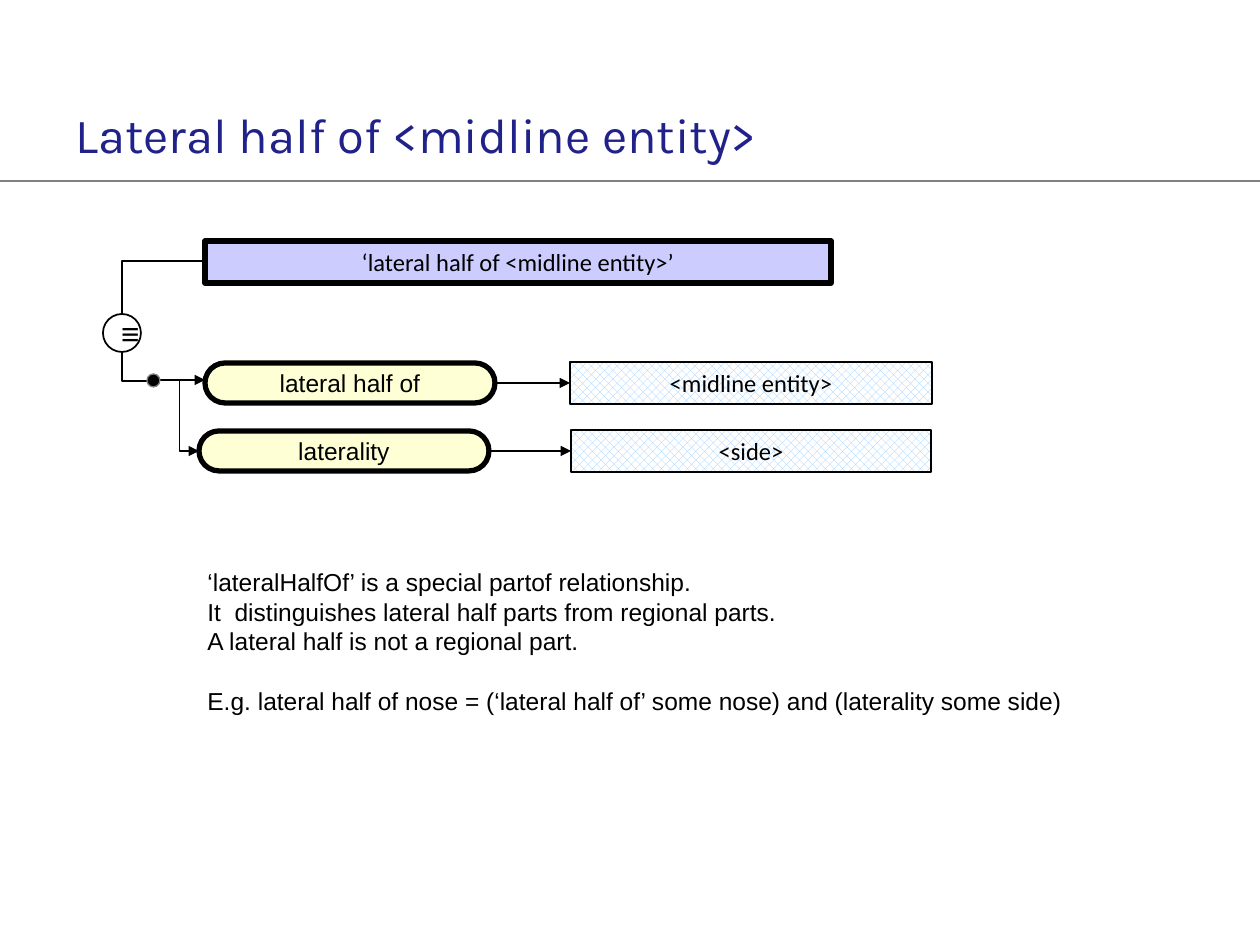
import pptx
import pptx.util
import pptx.dml.color
import pptx.enum.dml
import pptx.enum.shapes
import pptx.enum.text
import pptx.oxml.ns
from lxml import etree

RGB = pptx.dml.color.RGBColor
KIND = pptx.enum.shapes.MSO_SHAPE
LINK = pptx.enum.shapes.MSO_CONNECTOR
ALIGN = pptx.enum.text.PP_ALIGN
MID = pptx.enum.text.MSO_ANCHOR.MIDDLE
Pt = pptx.util.Pt
qn = pptx.oxml.ns.qn

BLACK = RGB(0, 0, 0)
WHITE = RGB(255, 255, 255)
GREY = RGB(128, 128, 128)
NAVY = RGB(0x21, 0x21, 0x8A)
LILAC = RGB(0xCC, 0xCC, 0xFF)
CREAM = RGB(0xFF, 0xFF, 0xD5)
SKY = RGB(0x99, 0xCC, 0xFF)

# Content
TITLE = "Lateral half of <midline entity>"
HEAD = "‘lateral half of <midline entity>’"
# relation, its box, value, its box
ROWS = [
    ("lateral half of", (205, 363, 290, 40), "<midline entity>", (570, 362, 362, 42)),
    ("laterality", (199, 431, 290, 40), "<side>", (571, 430, 360, 42)),
]
NOTES = [
    "‘lateralHalfOf’ is a special partof relationship.",
    "It  distinguishes lateral half parts from regional parts.",
    "A lateral half is not a regional part.",
    "E.g. lateral half of nose = (‘lateral half of’ some nose) and (laterality some side)",
]
LEAD = 16.9  # line pitch of the notes, in points


def px(n):
    return pptx.util.Emu(round(n * 914400 / 126))


def put(para, text, size, font, color=BLACK):
    run = para.add_run()
    run.text = text
    run.font.size = Pt(size)
    run.font.name = font
    run.font.color.rgb = color


def shape(kind, box, fill, width, edge=BLACK):
    item = slide.shapes.add_shape(kind, *map(px, box))
    item.shadow.inherit = False
    item.fill.solid()
    item.fill.fore_color.rgb = fill
    item.line.color.rgb = edge
    item.line.width = Pt(width)
    return item


def label(item, text, font, size=14, tight=False):
    frame = item.text_frame
    frame.word_wrap = True
    frame.vertical_anchor = MID
    if tight:
        frame.margin_left = frame.margin_right = px(9)
        frame.margin_top = frame.margin_bottom = px(4)
    para = frame.paragraphs[0]
    para.alignment = ALIGN.CENTER
    put(para, text, size, font)


def link(start, end, arrow=False, bend=None, width=1, color=BLACK):
    kind = LINK.STRAIGHT if bend is None else LINK.ELBOW
    line = slide.shapes.add_connector(kind, *map(px, start + end))
    line.line.color.rgb = color
    line.line.width = Pt(width)
    props = line._element.spPr
    if bend is not None:
        guides = props.find(qn("a:prstGeom")).get_or_add_avLst()
        etree.SubElement(guides, qn("a:gd"), name="adj1", fmla=f"val {bend * 1000}")
    if arrow:
        etree.SubElement(props.find(qn("a:ln")), qn("a:tailEnd"), type="triangle")
    etree.SubElement(props, qn("a:effectLst"))
    return line


deck = pptx.Presentation()
deck.slide_width, deck.slide_height = px(1260), px(945)
slide = deck.slides.add_slide(deck.slide_layouts[5])

# Title and rule
title = slide.shapes.title
title.left, title.top, title.width, title.height = map(px, (63, 98, 908, 71))
frame = title.text_frame
frame.word_wrap = True
frame.vertical_anchor = MID
frame.margin_left = frame.margin_right = frame.margin_top = frame.margin_bottom = px(12.6)
frame.paragraphs[0].alignment = ALIGN.LEFT
put(frame.paragraphs[0], TITLE, 28, "Karla", NAVY)
link((0, 181), (1260, 181), width=0.75, color=GREY)

# Defined class
head = shape(KIND.RECTANGLE, (205, 241, 626, 42), LILAC, 3)
label(head, HEAD, "Calibri", tight=True)

# Relations and their values
pills = []
for name, left, value, right in ROWS:
    pill = shape(KIND.ROUNDED_RECTANGLE, left, CREAM, 3)
    pill.adjustments[0] = 0.5
    label(pill, name, "Arial")
    pills.append(pill)
    box = shape(KIND.RECTANGLE, right, WHITE, 0.75)
    box.fill.patterned()
    box.fill.pattern = pptx.enum.dml.MSO_PATTERN.PERCENT_50
    box.fill.fore_color.rgb = SKY
    box.fill.back_color.rgb = WHITE
    label(box, value, "Calibri", tight=True)
    line = link((0, 0), (1, 1), arrow=True)
    line.begin_connect(pill, 3)
    line.end_connect(box, 1)

# Equivalence sign, branch point and their links
link((205, 261), (122, 314), bend=100)
link((147, 381), (122, 352), bend=100)
link((160, 380), (205, 380), arrow=True)
link((160, 380), (199, 451), arrow=True, bend=50)
shape(KIND.OVAL, (147, 374, 13, 13), BLACK, 0.75, GREY)
sign = shape(KIND.OVAL, (103, 314, 38, 38), WHITE, 1)
label(sign, "≡", "Courier New", 18)

# Notes
frame = slide.shapes.add_textbox(*map(px, (195, 561, 951, 161))).text_frame
frame.word_wrap = True
for i, text in enumerate(NOTES):
    para = frame.paragraphs[0] if i == 0 else frame.add_paragraph()
    para.line_spacing = Pt(LEAD)
    if i == len(NOTES) - 1:
        para.space_before = Pt(LEAD)
    put(para, text, 14, "Arial")

deck.save("out.pptx")
